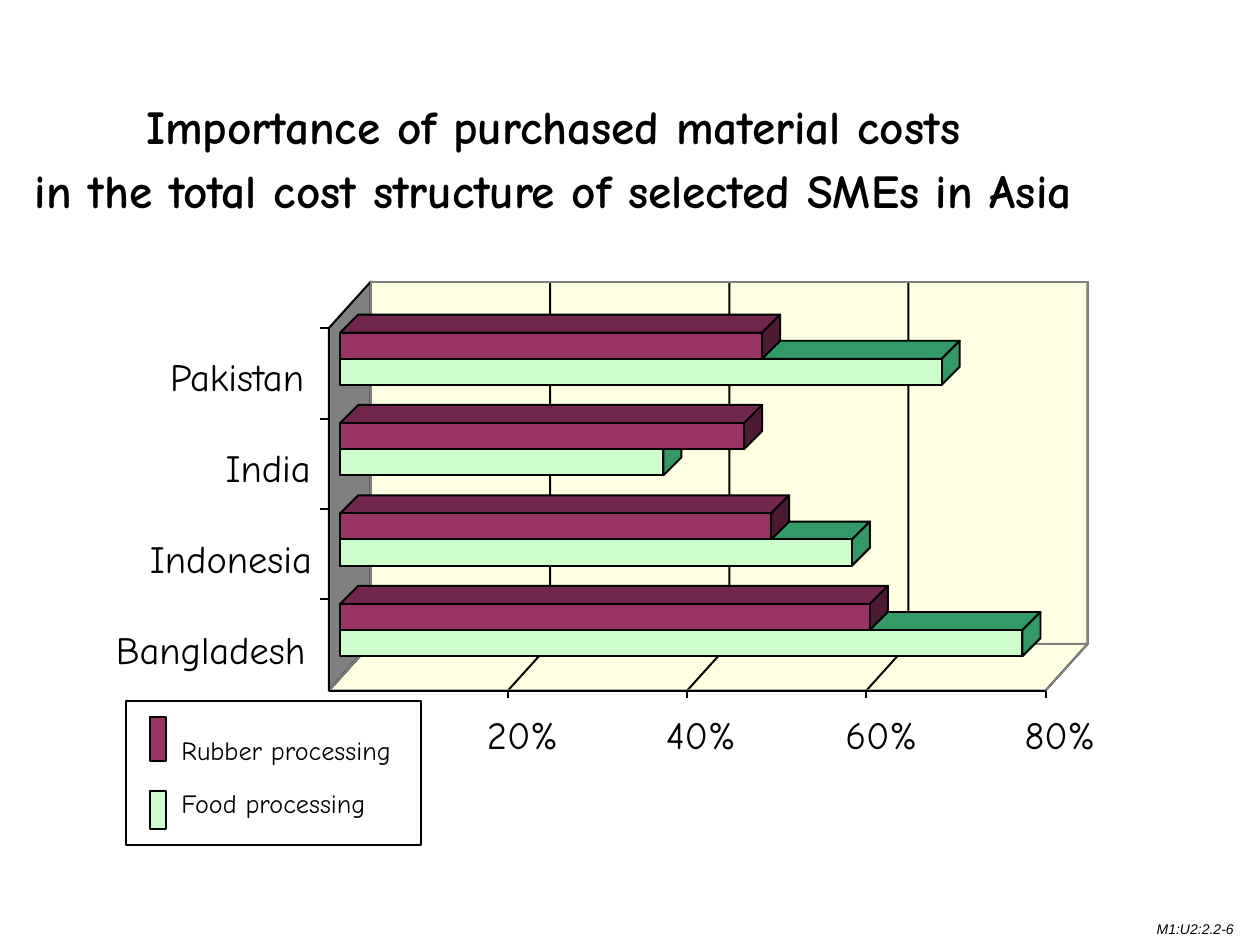
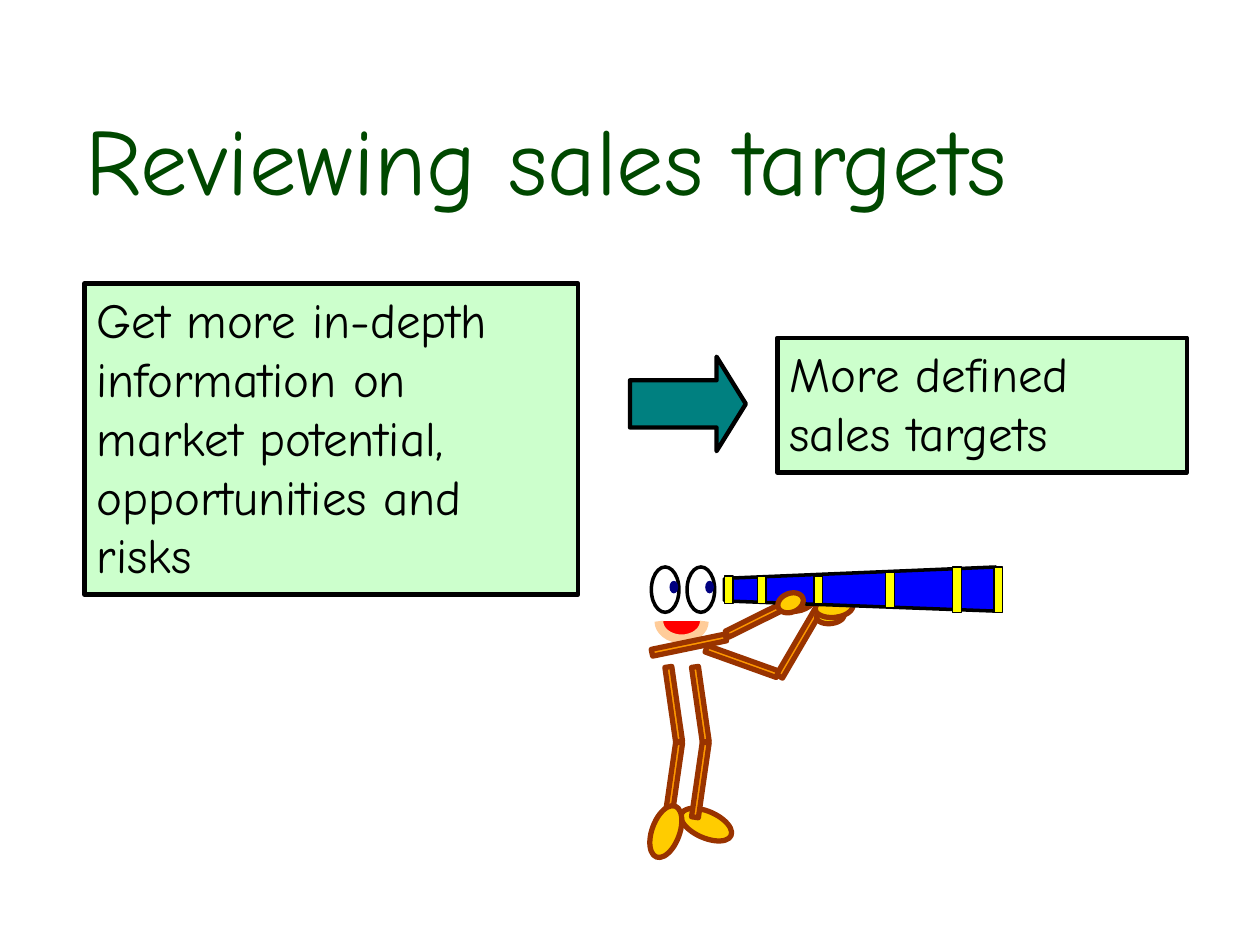
import math

import pptx
import pptx.chart.data
import pptx.dml.color
import pptx.enum.chart
import pptx.enum.shapes
import pptx.enum.text
import pptx.oxml
import pptx.oxml.ns
import pptx.util

Pt = pptx.util.Pt
SHAPE = pptx.enum.shapes.MSO_SHAPE
ALIGN = pptx.enum.text.PP_ALIGN
FONT = "Comic Neue"
COLORS = {
    "black": "000000", "white": "FFFFFF", "title": "004800",
    "wall": "FFFFE1", "grey": "808080",
    "food": "CCFFCC", "food_depth": "339966",
    "rubber": "993366", "rubber_top": "73264D", "rubber_side": "4D1A33",
    "arrow": "008080", "pupil": "000080", "limb": "FF9900", "skin": "FFCC00",
    "outline": "993300", "mouth": "FF0000", "lips": "FFCC99",
    "tube": "0000FF", "ring": "FFFF00",
}
THIN = ("black", 1.13)
THICK = ("black", 2.5)
LIMB_LINE = ("outline", 3)

# Chart data, from the bottom category upwards
COUNTRIES = ["Bangladesh", "Indonesia", "India", "Pakistan"]
FOOD = [76, 57, 36, 67]
RUBBER = [59, 48, 45, 47]

# Chart geometry in points
FLOOR_LEFT, FLOOR_BOTTOM = 187.9, 394.6
DEPTH_X, DEPTH_Y = 24, 26.6
WALL_TOP = 160.9
TICK_STEP = 102.4
BAND = 51.66
BAR_LEFT, BAR_HEIGHT, BAR_DEPTH = 194.4, 14.95, 10.3
POINTS_PER_PERCENT = 5.13
FIRST_PAIR_MIDDLE = 360


def color(name):
    return pptx.dml.color.RGBColor.from_string(COLORS[name])


def paint(shape, fill=None, line=None):
    """Set the fill and the outline, given as (colour, width)."""
    if fill:
        shape.fill.solid()
        shape.fill.fore_color.rgb = color(fill)
    else:
        shape.fill.background()
    if line:
        shape.line.color.rgb = color(line[0])
        shape.line.width = Pt(line[1])
    else:
        shape.line.fill.background()
    shape.shadow.inherit = False


def add_preset(shapes, kind, box, fill, line=None, turn=0):
    shape = shapes.add_shape(kind, *map(Pt, box))
    paint(shape, fill, line)
    shape.rotation = turn
    return shape


def add_outline(shapes, points, fill=None, line=None, close=True):
    start, *others = [(Pt(x), Pt(y)) for x, y in points]
    builder = shapes.build_freeform(*start)
    builder.add_line_segments(others, close=close)
    shape = builder.convert_to_shape()
    paint(shape, fill, line)
    return shape


def add_line(page, start, end):
    line = page.shapes.add_connector(
        pptx.enum.shapes.MSO_CONNECTOR.STRAIGHT, *map(Pt, start + end))
    line.line.color.rgb = color(THIN[0])
    line.line.width = Pt(THIN[1])
    properties = line.element.find(pptx.oxml.ns.qn("p:spPr"))
    properties.append(pptx.oxml.parse_xml(
        "<a:effectLst %s/>" % pptx.oxml.ns.nsdecls("a")))


def write(shape, lines, size, ink="black", font=FONT, bold=False,
          italic=False, align=ALIGN.LEFT, inset=(0, 0), gap=0):
    """Fill a shape with paragraphs that share one style."""
    frame = shape.text_frame
    frame.auto_size = pptx.enum.text.MSO_AUTO_SIZE.NONE
    frame.word_wrap = True
    frame.vertical_anchor = pptx.enum.text.MSO_ANCHOR.TOP
    frame.margin_left = frame.margin_right = Pt(inset[0])
    frame.margin_top = frame.margin_bottom = Pt(inset[1])
    frame.text = "\n".join(lines)
    for number, para in enumerate(frame.paragraphs):
        para.alignment = align
        para.space_before = Pt(gap if number else 0)
        for span in para.runs:
            span.font.name = font
            span.font.size = Pt(size)
            span.font.bold = bold
            span.font.italic = italic
            span.font.color.rgb = color(ink)


def add_label(page, box, text, size, **style):
    write(page.shapes.add_textbox(*map(Pt, box)), [text], size, **style)


def add_page(deck, box, title_lines, size, **style):
    """Add a title-only slide with its title placed and formatted."""
    page = deck.slides.add_slide(deck.slide_layouts[5])
    title = page.shapes.title
    title.left, title.top, title.width, title.height = map(Pt, box)
    write(title, title_lines, size, **style)
    return page


# Cost chart
def add_chart_room(page):
    shapes = page.shapes
    right = FLOOR_LEFT + 4 * TICK_STEP
    back_left, back_right = FLOOR_LEFT + DEPTH_X, right + DEPTH_X
    back_bottom = FLOOR_BOTTOM - DEPTH_Y
    side = [(FLOOR_LEFT, FLOOR_BOTTOM), (back_left, back_bottom),
            (back_left, WALL_TOP), (FLOOR_LEFT, WALL_TOP + DEPTH_Y)]
    floor = [(FLOOR_LEFT, FLOOR_BOTTOM), (right, FLOOR_BOTTOM),
             (back_right, back_bottom), (back_left, back_bottom)]
    wall = (back_left, WALL_TOP, back_right - back_left, back_bottom - WALL_TOP)

    add_outline(shapes, side, "grey")
    add_outline(shapes, floor, "wall")
    add_preset(shapes, SHAPE.RECTANGLE, wall, "wall")
    for number in range(5):
        x = FLOOR_LEFT + number * TICK_STEP
        add_outline(shapes, [(x, FLOOR_BOTTOM), (x + DEPTH_X, back_bottom),
                             (x + DEPTH_X, WALL_TOP)], line=THIN, close=False)
    add_outline(shapes, side, line=THIN)
    add_outline(shapes, floor, line=("grey", 1.13))
    add_preset(shapes, SHAPE.RECTANGLE, wall, None, ("grey", 1.13))


def add_bar_depth(page, percent, top, top_fill, side_fill):
    """Draw the upper face and the end face of one bar."""
    end = BAR_LEFT + percent * POINTS_PER_PERCENT
    back, raised = end + BAR_DEPTH, top - BAR_DEPTH
    add_outline(page.shapes, [(BAR_LEFT, top), (end, top), (back, raised),
                              (BAR_LEFT + BAR_DEPTH, raised)], top_fill, THIN)
    add_outline(page.shapes, [(end, top), (back, raised),
                              (back, raised + BAR_HEIGHT),
                              (end, top + BAR_HEIGHT)], side_fill, THIN)


def fix_plot_area(chart, margin, width, height):
    """Pin the plot area inside the frame and make the backgrounds clear."""
    qn, nsdecls = pptx.oxml.ns.qn, pptx.oxml.ns.nsdecls
    clear = ("<c:spPr %s><a:noFill/><a:ln><a:noFill/></a:ln></c:spPr>"
             % nsdecls("c", "a"))
    sizes = {"x": margin / width, "y": margin / height,
             "w": 1 - 2 * margin / width, "h": 1 - 2 * margin / height}
    modes = "".join('<c:%sMode val="edge"/>' % axis for axis in "xy")
    values = "".join('<c:%s val="%.5f"/>' % item for item in sizes.items())
    layout = ('<c:layout %s><c:manualLayout><c:layoutTarget val="inner"/>%s%s'
              "</c:manualLayout></c:layout>" % (nsdecls("c"), modes, values))
    body = chart.element.find(qn("c:chart"))
    plot_area = body.find(qn("c:plotArea"))
    for old in plot_area.findall(qn("c:layout")):
        plot_area.remove(old)
    plot_area.insert(0, pptx.oxml.parse_xml(layout))
    plot_area.append(pptx.oxml.parse_xml(clear))
    body.addnext(pptx.oxml.parse_xml(clear))


def add_bar_fronts(page):
    data = pptx.chart.data.CategoryChartData()
    data.categories = COUNTRIES
    data.add_series("Food processing", FOOD)
    data.add_series("Rubber processing", RUBBER)
    margin = 10
    width = 80 * POINTS_PER_PERCENT + 2 * margin
    height = len(COUNTRIES) * BAND + 2 * margin
    top = FIRST_PAIR_MIDDLE + BAND / 2 + margin - height
    chart = page.shapes.add_chart(
        pptx.enum.chart.XL_CHART_TYPE.BAR_CLUSTERED,
        *map(Pt, (BAR_LEFT - margin, top, width, height)), data).chart
    chart.font.name = FONT
    chart.font.size = Pt(22)
    chart.font.color.rgb = color("black")
    chart.has_legend = chart.has_title = False
    chart.value_axis.minimum_scale = 0
    chart.value_axis.maximum_scale = 80
    chart.value_axis.has_major_gridlines = False
    chart.value_axis.visible = chart.category_axis.visible = False
    plot = chart.plots[0]
    plot.vary_by_categories = False
    plot.overlap = 0
    plot.gap_width = round(100 * (BAND / BAR_HEIGHT - 2))
    for series, fill in zip(plot.series, ("food", "rubber")):
        series.format.fill.solid()
        series.format.fill.fore_color.rgb = color(fill)
        series.format.line.color.rgb = color(THIN[0])
        series.format.line.width = Pt(THIN[1])
    fix_plot_area(chart, margin, width, height)


def add_axes(page):
    top = WALL_TOP + DEPTH_Y
    corner = (FLOOR_LEFT, FLOOR_BOTTOM)
    add_line(page, corner, (FLOOR_LEFT + 4 * TICK_STEP, FLOOR_BOTTOM))
    add_line(page, corner, (FLOOR_LEFT, top))
    for number in range(1, 5):
        x = FLOOR_LEFT + number * TICK_STEP
        add_line(page, (x, FLOOR_BOTTOM), (x, FLOOR_BOTTOM + 4))
        add_label(page, (x - 12, 406, 52, 27), f"{20 * number}%", 22)
    places = [(66.2, 114), (85.7, 100), (128.9, 54), (97.2, 85)]
    for number, (country, (left, width)) in enumerate(zip(COUNTRIES, places)):
        y = top + number * BAND
        add_line(page, (FLOOR_LEFT, y), (FLOOR_LEFT - 5, y))
        add_label(page, (left, 357.6 - number * 52, width, 27), country, 22)


def add_legend(page):
    add_preset(page.shapes, SHAPE.RECTANGLE, (72, 400.3, 168.5, 82.8),
               "white", THIN)
    entries = [("Rubber processing", "rubber", 409.7, 25.2, 419.8),
               ("Food processing", "food", 452.2, 21.6, 450)]
    for text, fill, key_top, key_height, text_top in entries:
        add_preset(page.shapes, SHAPE.RECTANGLE,
                   (85.7, key_top, 9.4, key_height), fill, THIN)
        add_label(page, (103.7, text_top, 134, 18), text, 15)


def build_cost_page(deck):
    page = add_page(
        deck, (10, 55.4, 612, 74),
        ["Importance of purchased material costs",
         "in the total cost structure of selected SMEs in Asia"],
        27, bold=True, align=ALIGN.CENTER, gap=4.2)
    add_chart_room(page)
    for number, (food, rubber) in enumerate(zip(FOOD, RUBBER)):
        middle = FIRST_PAIR_MIDDLE - number * BAND
        add_bar_depth(page, food, middle, "food_depth", "food_depth")
        add_bar_depth(page, rubber, middle - BAR_HEIGHT,
                      "rubber_top", "rubber_side")
    add_bar_fronts(page)
    add_axes(page)
    add_legend(page)
    add_label(page, (653.8, 522.7, 60, 16.6), "M1:U2:2.2-6", 8,
              font="Arial", italic=True, inset=(7.2, 3.6))


# Figure with a telescope
def add_limb(shapes, left, top, turn):
    add_preset(shapes, SHAPE.RECTANGLE, (left, top, 4, 43.2), "limb",
               LIMB_LINE, turn)


def add_oval(shapes, box, turn):
    add_preset(shapes, SHAPE.OVAL, box, "skin", LIMB_LINE, turn)


def add_lookout(page):
    shapes = page.shapes.add_group_shape().shapes
    # Eyes
    for left in (372.2, 392.6):
        add_preset(shapes, SHAPE.OVAL, (left, 324, 15.8, 25.9), "white",
                   ("black", 2))
        add_preset(shapes, SHAPE.OVAL, (left + 10.4, 331.9, 5, 7.2), "pupil")
    # Legs and feet
    add_oval(shapes, (388.1, 463.7, 31, 15.1), 23.8)
    for left in (398.2, 383):
        add_limb(shapes, left, 380.9, -8.2)
        add_limb(shapes, left, 424.1, 8.2)
    add_oval(shapes, (365, 467.3, 31, 15.8), -69.8)
    # Mouth
    angles = [math.pi * step / 16 for step in range(17)]
    add_outline(shapes, [(389.5 - 13 * math.cos(angle),
                          355 + 10.1 * math.sin(angle)) for angle in angles],
                "mouth", ("lips", 5), close=False)
    # Arms and hands
    add_limb(shapes, 391.7, 347, 258.3)
    add_limb(shapes, 432.7, 331.2, 243.6)
    add_oval(shapes, (446.4, 334.1, 21.6, 14.4), 154.1)
    add_limb(shapes, 454.3, 346.3, 30.3)
    add_limb(shapes, 421.9, 356.4, 109.7)
    add_oval(shapes, (466.6, 347.8, 15.8, 8.6), -6.1)
    add_oval(shapes, (465.8, 341.3, 21.6, 11.5), -6.1)
    # Telescope
    add_outline(shapes, [(568.8, 324), (414, 330.5), (414, 343.4),
                         (568.8, 349.2)], "tube", ("black", 2))
    add_oval(shapes, (444.2, 339.1, 15.1, 10.8), -21.8)
    rings = [(414, 15.8), (432.7, 15.8), (465.1, 15.8), (506.2, 20.2),
             (568.1, 25.9), (544.3, 25.9)]
    for left, height in rings:
        add_preset(shapes, SHAPE.RECTANGLE,
                   (left, 337 - height / 2, 5, height), "ring",
                   ("black", 0.75))


def build_target_page(deck):
    page = add_page(deck, (41.8, 54, 635.8, 72), ["Reviewing sales targets"],
                    54, ink="title", inset=(7.2, 3.6))
    notes = [
        ((48.2, 162, 282.2, 177.8), "Get more in-depth information on market "
                                    "potential, opportunities and risks"),
        ((444.2, 193, 234, 77), "More defined sales targets"),
    ]
    for box, text in notes:
        note = add_preset(page.shapes, SHAPE.RECTANGLE, box, "food", THICK)
        write(note, [text], 28, inset=(7.2, 3.6))
    arrow = add_preset(page.shapes, SHAPE.RIGHT_ARROW,
                       (360, 203.8, 66.2, 54), "arrow", THICK)
    arrow.adjustments[0] = 0.5
    arrow.adjustments[1] = 0.31
    add_lookout(page)


def main():
    deck = pptx.Presentation()
    deck.slide_width, deck.slide_height = Pt(720), Pt(540)
    build_cost_page(deck)
    build_target_page(deck)
    deck.save("out.pptx")


if __name__ == "__main__":
    main()
